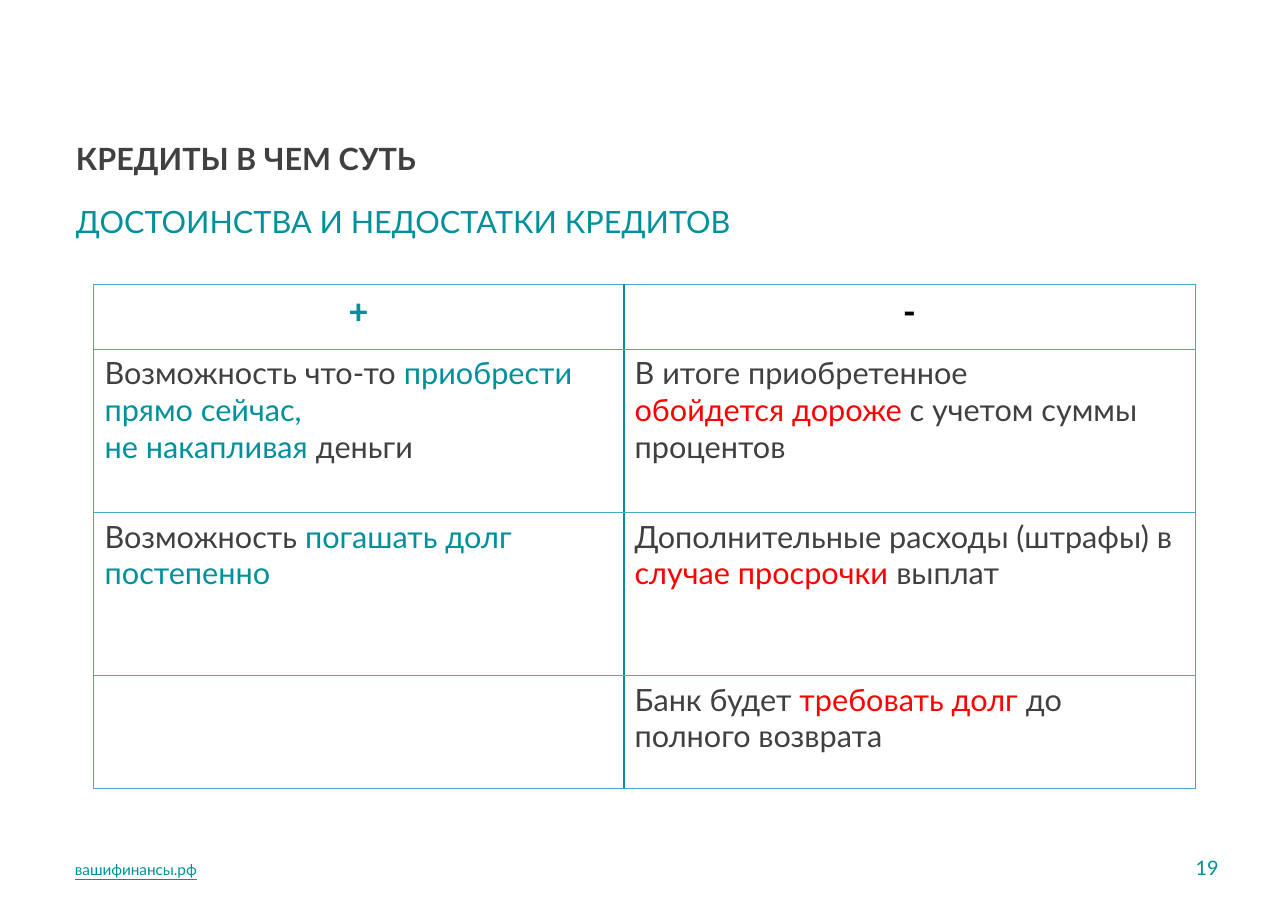
"""Build the slide on the advantages and drawbacks of loans."""
from dataclasses import dataclass

from lxml.etree import SubElement as Sub
from pptx import Presentation
from pptx.dml.color import RGBColor as Rgb
from pptx.enum.text import MSO_ANCHOR as Anchor, MSO_AUTO_SIZE as Auto, PP_ALIGN as Align
from pptx.oxml.ns import qn
from pptx.util import Inches, Pt


@dataclass(frozen=True)
class Theme:
    teal: str = "00909B"
    sky: str = "46AAC5"
    gray: str = "404040"
    red: str = "FF0000"
    black: str = "000000"
    text: str = "Lato"
    sign: str = "Calibri"
    head: int = 24
    body: int = 20
    page: int = 13
    link: int = 10


theme = Theme()


def write(para, text, color, size=theme.body, name=theme.text, bold=False, under=False):
    """Add a run, turning each newline into a line break."""
    for i, line in enumerate(text.split("\n")):
        if i:
            para.add_line_break()
        run = para.add_run()
        run.text = line
        look = {"size": Pt(size), "name": name, "bold": bold, "underline": under}
        for key, value in look.items():
            setattr(run.font, key, value)
        run.font.color.rgb = Rgb.from_string(color)


def edge(cell, side, color, width):
    """Draw one side of a cell."""
    line = Sub(cell._tc.get_or_add_tcPr(), qn(f"a:ln{side}"), w=str(Pt(width)))
    Sub(Sub(line, qn("a:solidFill")), qn("a:srgbClr"), val=color)


deck = Presentation()
deck.slide_width, deck.slide_height = Inches(11.69), Inches(8.27)
slide = deck.slides.add_slide(deck.slide_layouts[5])

labels = [
    (slide.shapes.title, (0.58, 1.22, 10.52, 0.96), Anchor.TOP, Align.LEFT,
     "КРЕДИТЫ В ЧЕМ СУТЬ", {"color": theme.gray, "bold": True}),
    (None, (0.58, 1.79, 10.52, 0.94), Anchor.TOP, Align.LEFT,
     "ДОСТОИНСТВА И НЕДОСТАТКИ КРЕДИТОВ", {"color": theme.teal}),
    (None, (0.57, 7.67, 3.97, 0.44), Anchor.MIDDLE, Align.LEFT,
     "вашифинансы.рф", {"color": theme.teal, "size": theme.link, "under": True}),
    (None, (10.3, 7.66, 0.87, 0.44), Anchor.MIDDLE, Align.RIGHT,
     "19", {"color": theme.teal, "size": theme.page}),
]
for shape, place, anchor, align, text, look in labels:
    box = [Inches(n) for n in place]
    shape = shape or slide.shapes.add_textbox(*box)
    shape.left, shape.top, shape.width, shape.height = box
    frame = shape.text_frame
    form = {"word_wrap": True, "auto_size": Auto.NONE, "vertical_anchor": anchor,
            "margin_left": Inches(0.11), "margin_right": Inches(0.11),
            "margin_top": Inches(0.05), "margin_bottom": Inches(0.05)}
    for key, value in form.items():
        setattr(frame, key, value)
    frame.paragraphs[0].alignment = align
    write(frame.paragraphs[0], text, **look)

teal, gray, red = theme.teal, theme.gray, theme.red
rows = [
    ([[("+", teal)]], [[("-", theme.black)]]),
    ([[("Возможность что-то ", gray),
       ("приобрести прямо сейчас,\nне накапливая ", teal), ("деньги", gray)]],
     [[("В итоге приобретенное", gray)],
      [("обойдется дороже ", red), ("с учетом суммы процентов", gray)]]),
    ([[("Возможность ", gray), ("погашать долг постепенно", teal)]],
     [[("Дополнительные расходы (штрафы) в ", gray),
       ("случае просрочки ", red), ("выплат", gray)]]),
    ([],
     [[("Банк будет ", gray), ("требовать долг ", red), ("до полного возврата", gray)]]),
]
table = slide.shapes.add_table(4, 2, Inches(0.85), Inches(2.58), Inches(10), Inches(4.58)).table
table.first_row = table.horz_banding = False
for col, width in zip(table.columns, (4.81, 5.19)):
    col.width = Inches(width)
for row, height in zip(table.rows, (0.59, 1.48, 1.48, 1.03)):
    row.height = Inches(height)

for r, row in enumerate(rows):
    for c, paras in enumerate(row):
        cell = table.cell(r, c)
        inner = "R" if c == 0 else "L"
        for side in "LRTB":
            edge(cell, side, *((teal, 1.5) if side == inner else (theme.sky, 0.75)))
        cell.fill.background()
        for i, runs in enumerate(paras):
            para = cell.text_frame.add_paragraph() if i else cell.text_frame.paragraphs[0]
            para.alignment = Align.LEFT if r else Align.CENTER
            look = {} if r else {"size": theme.head, "name": theme.sign, "bold": True}
            for text, color in runs:
                write(para, text, color, **look)

deck.save("out.pptx")
